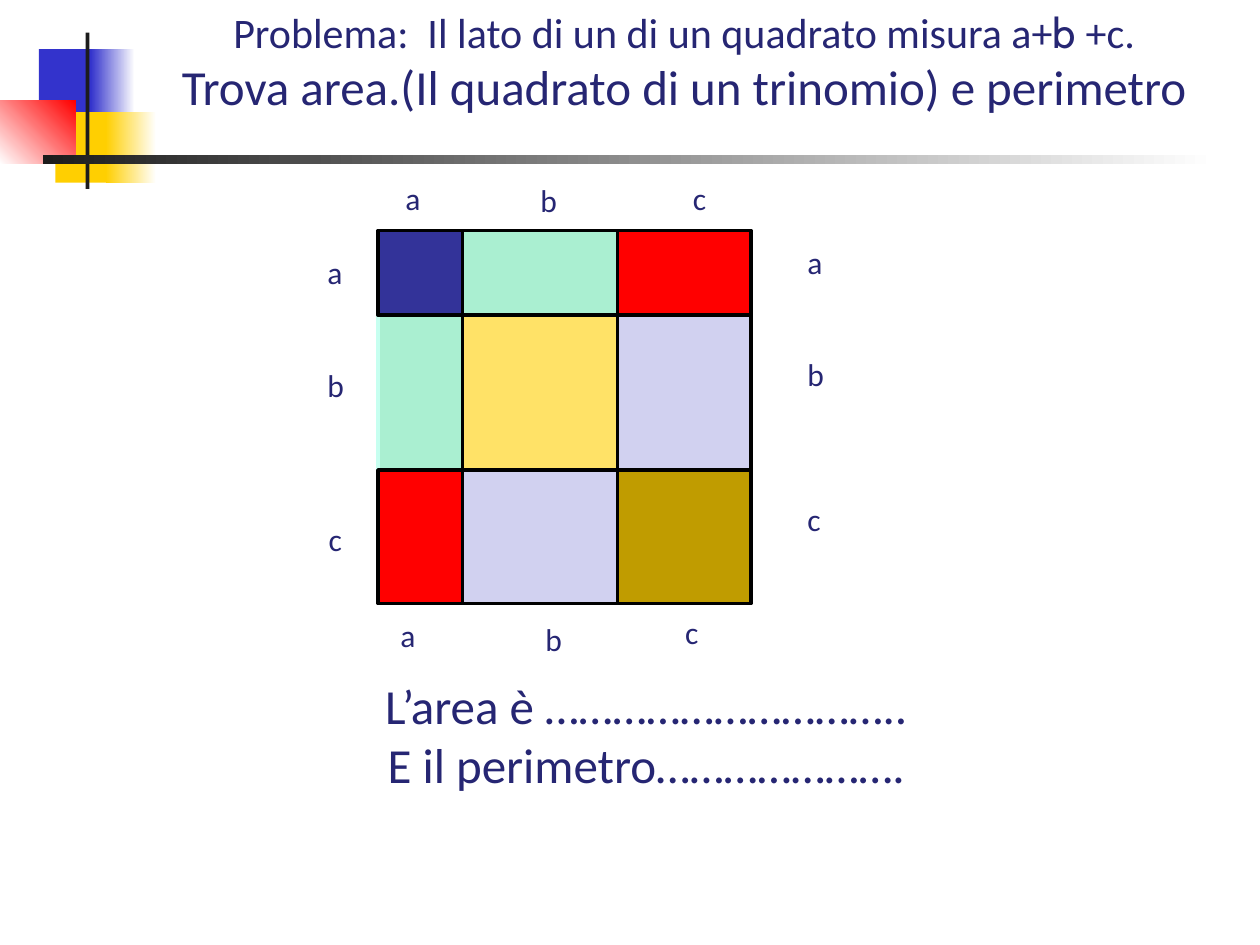
from itertools import accumulate
from pptx import Presentation
from pptx import util as u
from pptx.dml.color import RGBColor
from pptx.enum import shapes, text

COLS, ROWS = 10, 7.5
INK, BLACK = "262673", "000000"
MINT, RED, LILAC = "AAEFD1", "FF0000", "D1D1F0"


def rgb(value):
    return RGBColor.from_string(value)


class Page:
    font = "Calibri"
    frame = {"word_wrap": True, "vertical_anchor": text.MSO_ANCHOR.TOP}

    def __init__(self, prs):
        self.s = prs.slides.add_slide(prs.slide_layouts[6])
        self.col = prs.slide_width / COLS
        self.row = prs.slide_height / ROWS

    def place(self, x, y, w, h):
        return [round(n) for n in (x * self.col, y * self.row, w * self.col, h * self.row)]

    def rect(self, box, fill, line=None, angle=0):
        sp = self.s.shapes.add_shape(shapes.MSO_SHAPE.RECTANGLE, *self.place(*box))
        sp.shadow.inherit = False
        if isinstance(fill, tuple):
            sp.fill.gradient()
            sp.fill.gradient_angle = angle
            for stop, value in zip(sp.fill.gradient_stops, fill):
                stop.color.rgb = rgb(value)
        else:
            sp.fill.solid()
            sp.fill.fore_color.rgb = rgb(fill)
        if line:
            sp.line.color.rgb = rgb(line)
            sp.line.width = u.Pt(2)
        else:
            sp.line.fill.background()

    def label(self, box, lines, align=text.PP_ALIGN.LEFT):
        tf = self.s.shapes.add_textbox(*self.place(*box)).text_frame
        for name, value in self.frame.items():
            setattr(tf, name, value)
        for i, (size, *runs) in enumerate(lines):
            p = tf.add_paragraph() if i else tf.paragraphs[0]
            p.alignment = align
            for words, font in runs:
                r = p.add_run()
                r.text = words
                r.font.color.rgb = rgb(INK)
                for name, value in {"name": font or self.font, "size": u.Pt(size)}.items():
                    setattr(r.font, name, value)


def ornament(page):
    for box, fill, angle in [
        ((0.31, 0.39, 0.47, 0.56), "3333CC", 0),
        ((0.72, 0.39, 0.35, 0.56), ("3333CC", "FFFFFF"), 0),
        ((0.44, 0.89, 0.45, 0.56), "FFCF01", 0),
        ((0.84, 0.89, 0.4, 0.56), ("FFCF01", "FFFFFF"), 0),
        ((0, 0.8, 0.6, 0.5), ("FFFFFF", "FF0000"), 45),
        ((0.68, 0.26, 0.03, 1.24), "1C1C1C", 0),
        ((0.34, 1.23, 9.31, 0.07), ("1C1C1C", "FFFFFF"), 0),
    ]:
        page.rect(box, fill, angle=angle)


def trinomial_square(page):
    sides = [0.67, 1.23, 1.06]
    xs = list(accumulate(sides, initial=3))
    ys = list(accumulate(sides, initial=1.83))
    for i, j, fill, line in [
        (0, 1, MINT, "C7FFF0"), (1, 1, "FFE267", BLACK), (1, 0, MINT, BLACK),
        (0, 0, "333399", BLACK), (0, 2, RED, BLACK), (2, 0, RED, BLACK),
        (2, 1, LILAC, BLACK), (1, 2, LILAC, BLACK), (2, 2, "C09C00", BLACK),
    ]:
        page.rect((xs[i], ys[j], sides[i], sides[j]), fill, line)


def side_labels(page):
    top = [(3.12, 1.37), (4.19, 1.39), (5.4, 1.37)]
    bottom = [(3.08, 4.84), (4.23, 4.87), (5.34, 4.82)]
    left = [(2.5, 1.96), (2.5, 2.86), (2.51, 4.08)]
    right = [(6.31, 1.88), (6.31, 2.77), (6.31, 3.92)]
    for edge in (top, bottom, left, right):
        for name, (x, y) in zip("abc", edge):
            page.label((x, y, 1.17, 0.4), [(18, (name, None))])


def main():
    prs = Presentation()
    prs.slide_width, prs.slide_height = u.Inches(COLS), u.Inches(ROWS)
    page = Page(prs)
    ornament(page)
    page.label((1.2, 0, 8.46, 1.45), [
        (24, ("Problema:  Il lato di un di un quadrato misura a+", None), ("b", "Cabin"), (" +c.", None)),
        (28, ("Trova area.(Il quadrato di un trinomio) e perimetro", None)),
    ], text.PP_ALIGN.CENTER)
    trinomial_square(page)
    side_labels(page)
    page.label((0.9, 5.31, 8.46, 1.51), [
        (28, ("L’area è …………………………..", None)),
        (28, ("E il perimetro………………….", None)),
    ], text.PP_ALIGN.CENTER)
    prs.save("out.pptx")


if __name__ == "__main__":
    main()
